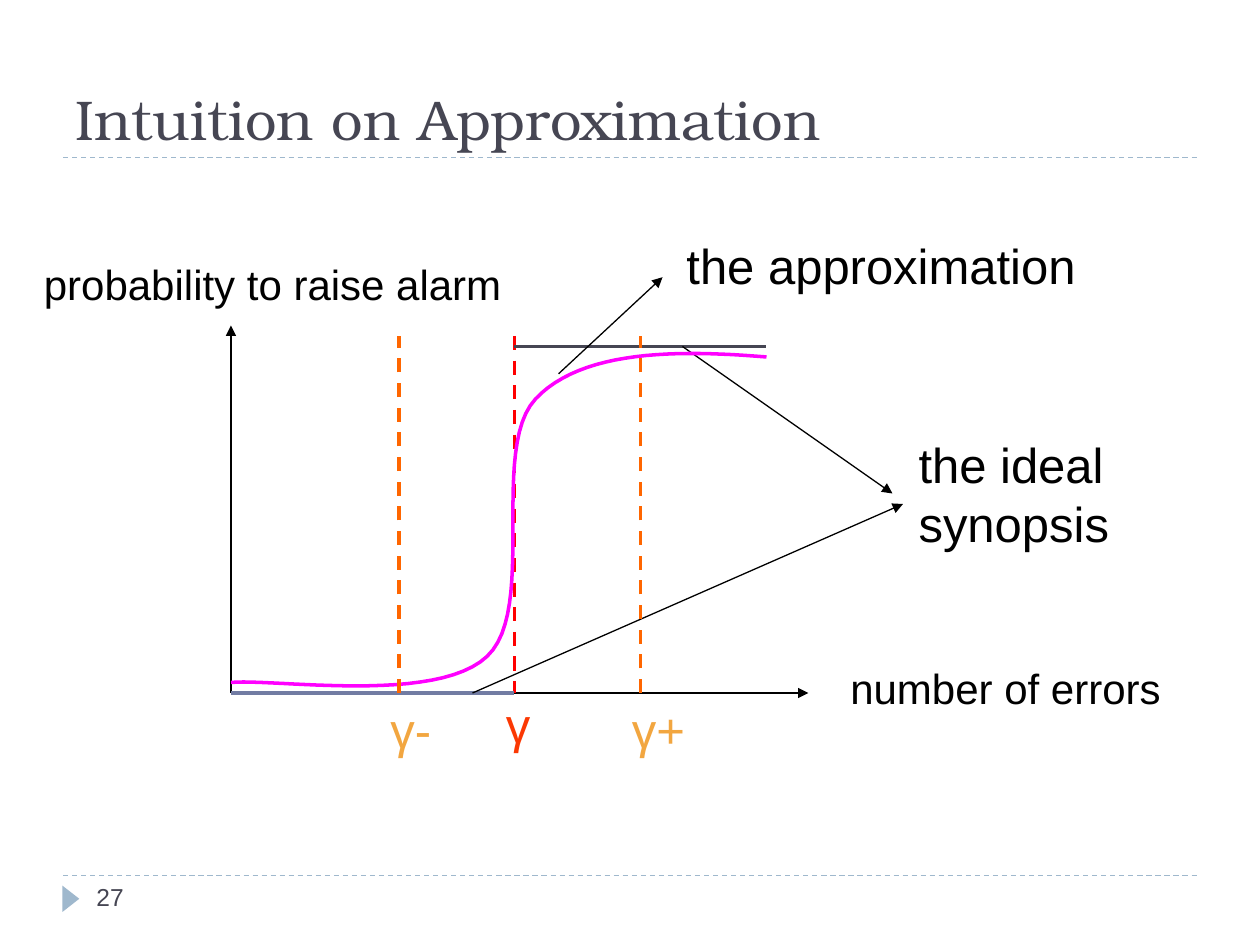
from dataclasses import dataclass
from lxml.etree import SubElement
from pptx import Presentation
from pptx.dml.color import RGBColor
from pptx.enum.dml import MSO_LINE
from pptx.enum.shapes import MSO_CONNECTOR, MSO_SHAPE
from pptx.enum.text import MSO_ANCHOR, MSO_AUTO_SIZE
from pptx.oxml.ns import qn
from pptx.util import Inches, Pt


@dataclass(frozen=True)
class Theme:
    ink: str = "000000"
    dark: str = "464653"
    pale: str = "9FB8CD"
    blue: str = "727CA3"
    red: str = "FF0000"
    orange: str = "FF6600"
    pink: str = "FF00FF"
    gamma: str = "FB3803"
    bound: str = "F2A640"
    serif: str = "TeX Gyre Bonum"
    sans: str = "Arial"
    title: int = 32
    label: int = 28
    axis: int = 24
    note: int = 14
    thin: float = 0.75
    bold: float = 2


THEME = Theme()
WIDE, HIGH = Inches(10), Inches(7.5)
COLS, ROWS = 120, 90

LEFT, BASE = 22, 66
LOW, MID, UP = 38, 49, 61
TOP, STEP, END = 32, 33, 73
CURVE = [
    [(22, 65), (26, 64.6), (41.6, 67.1), (46.4, 62.5)],
    [(46.4, 62.5), (51.2, 58), (46.6, 42.7), (51, 38)],
    [(51, 38), (55.4, 33.3), (64.6, 33.3), (73, 34)],
]


def col(n):
    return round(WIDE * n / COLS)


def row(n):
    return round(HIGH * n / ROWS)


def color(code):
    return RGBColor.from_string(code)


def apply(item, style):
    for name, value in style.items():
        setattr(item, name, value)


def draw(slide, start, stop, tint, width=THEME.thin, dash=None, arrow=False):
    link = slide.shapes.add_connector(
        MSO_CONNECTOR.STRAIGHT, col(start[0]), row(start[1]), col(stop[0]), row(stop[1])
    )
    apply(link.line, {"width": Pt(width), "dash_style": dash})
    link.line.color.rgb = color(tint)
    props = link._element.spPr
    if arrow:
        SubElement(props.find(qn("a:ln")), qn("a:tailEnd"), type="triangle")
    SubElement(props, qn("a:effectLst"))


def write(slide, words, box, size, tint, font=THEME.sans, wrap=False,
          anchor=MSO_ANCHOR.TOP, fit=MSO_AUTO_SIZE.SHAPE_TO_FIT_TEXT):
    x, y, w, h = box
    frame = slide.shapes.add_textbox(col(x), row(y), col(w), row(h)).text_frame
    apply(frame, {"word_wrap": wrap, "auto_size": fit, "vertical_anchor": anchor})
    run = frame.paragraphs[0].add_run()
    run.text = words
    apply(run.font, {"name": font, "size": Pt(size)})
    run.font.color.rgb = color(tint)


def trace(slide, parts, tint, steps=24):
    points = [parts[0][0]]
    for a, b, c, d in parts:
        for i in range(1, steps + 1):
            t = i / steps
            s = 1 - t
            points.append(tuple(
                s**3 * p + 3 * s * s * t * q + 3 * s * t * t * r + t**3 * e
                for p, q, r, e in zip(a, b, c, d)
            ))
    spots = [(col(x), row(y)) for x, y in points]
    path = slide.shapes.build_freeform(*spots[0])
    path.add_line_segments(spots[1:], close=False)
    curve = path.convert_to_shape()
    curve.shadow.inherit = False
    curve.fill.background()
    curve.line.color.rgb = color(tint)
    curve.line.width = Pt(THEME.bold)


def mark(slide, box, tint):
    x, y, w, h = box
    flag = slide.shapes.add_shape(
        MSO_SHAPE.ISOSCELES_TRIANGLE, col(x), row(y), col(w), row(h)
    )
    flag.rotation = 90
    flag.shadow.inherit = False
    flag.fill.solid()
    flag.fill.fore_color.rgb = color(tint)
    flag.line.fill.background()


def frame(slide):
    for y in (83.4, 15):
        draw(slide, (6, y), (114, y), THEME.pale, dash=MSO_LINE.DASH)
    mark(slide, (5.5, 84.8, 2.5, 1.6), THEME.pale)
    write(slide, "Intuition on Approximation", (6, 2, 108, 13), THEME.title, THEME.dark,
          THEME.serif, True, MSO_ANCHOR.BOTTOM, MSO_AUTO_SIZE.NONE)
    write(slide, "27", (8, 83.4, 26, 4.8), THEME.note, THEME.dark,
          wrap=True, fit=MSO_AUTO_SIZE.NONE)


def plot(slide):
    for stop in ((LEFT, 31), (77, BASE)):
        draw(slide, (LEFT, BASE), stop, THEME.ink, arrow=True)
    draw(slide, (MID, TOP), (MID, BASE), THEME.red, THEME.bold, MSO_LINE.DASH)
    draw(slide, (LEFT, BASE), (MID, BASE), THEME.blue, THEME.bold)
    draw(slide, (MID, STEP), (END, STEP), THEME.dark, THEME.bold)
    for start, stop in (((45, BASE), (86, 48)), ((65, STEP), (85, 47))):
        draw(slide, start, stop, THEME.ink, arrow=True)
    trace(slide, CURVE, THEME.pink)
    for x in (LOW, UP):
        draw(slide, (x, BASE), (x, TOP), THEME.orange, THEME.bold, MSO_LINE.DASH)
    draw(slide, (53.2, 35.6), (63.1, 26.4), THEME.ink, arrow=True)


def label(slide):
    write(slide, "number of errors", (79.8, 62.5, 32, 6), THEME.axis, THEME.ink)
    write(slide, "probability to raise alarm", (3, 24, 46.1, 6), THEME.axis, THEME.ink)
    write(slide, "γ", (47, 65.6, 4.8, 6.8), THEME.label, THEME.gamma)
    for words, x in (("γ-", LOW - 2), ("γ+", UP - 2)):
        write(slide, words, (x, BASE, 8, 6.8), THEME.label, THEME.bound, wrap=True)
    for words, box in (("the ideal synopsis", (86.3, 40.8, 24.1, 12.4)),
                       ("the approximation", (64.2, 21.8, 42, 6.8))):
        write(slide, words, box, THEME.label, THEME.ink, wrap=True)


def main():
    deck = Presentation()
    apply(deck, {"slide_width": WIDE, "slide_height": HIGH})
    slide = deck.slides.add_slide(deck.slide_layouts[6])
    frame(slide)
    plot(slide)
    label(slide)
    deck.save("out.pptx")


if __name__ == "__main__":
    main()
